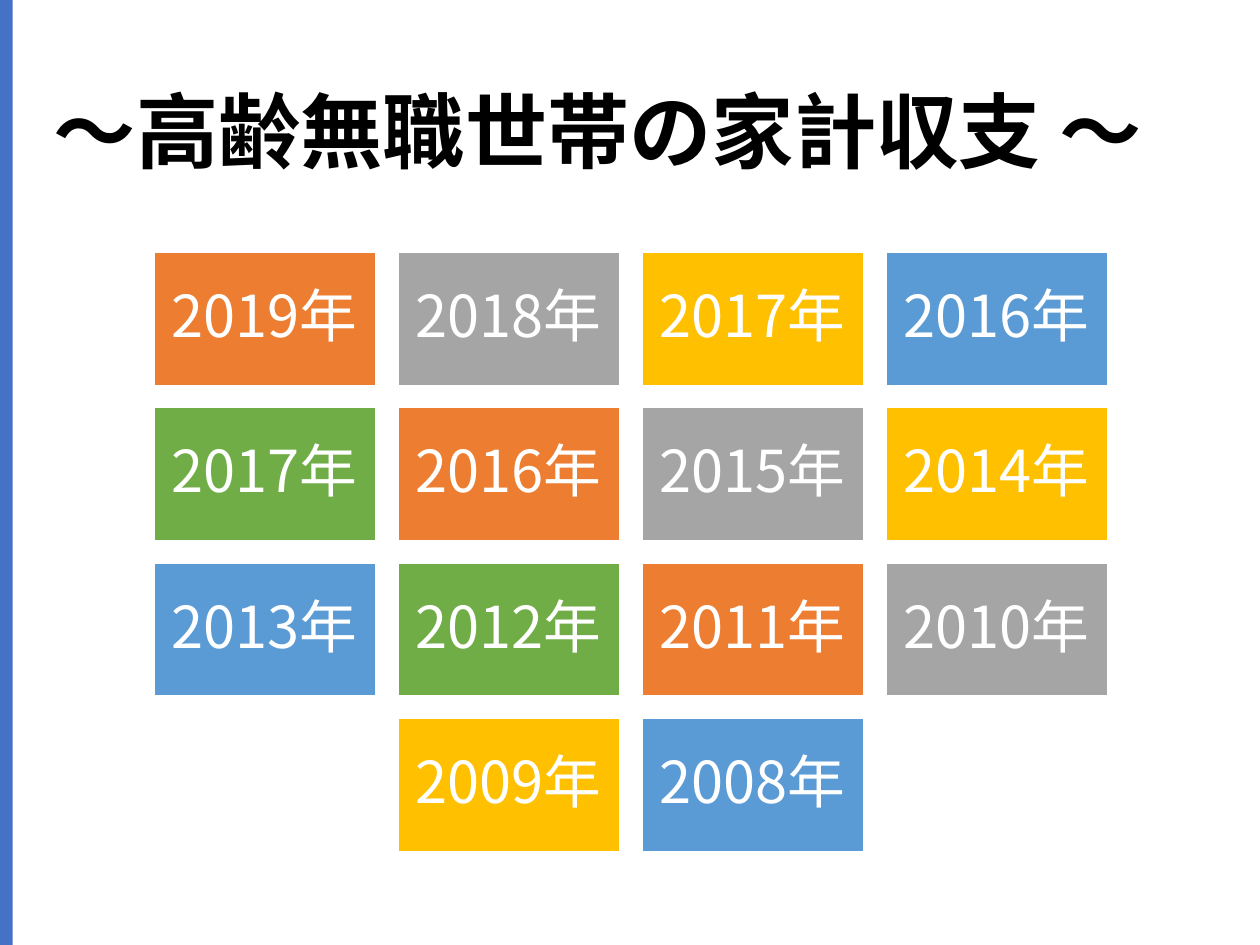
import itertools

import lxml.etree
import pptx
import pptx.dml.color
import pptx.enum.shapes
import pptx.enum.text
import pptx.oxml.ns
import pptx.util

Inches = pptx.util.Inches
RGBColor = pptx.dml.color.RGBColor
Align = pptx.enum.text.PP_ALIGN

FONT = "Noto Sans CJK JP"
BLACK = RGBColor(0x00, 0x00, 0x00)
WHITE = RGBColor(0xFF, 0xFF, 0xFF)
BAR_BLUE = RGBColor(0x44, 0x72, 0xC4)
ORANGE = RGBColor(0xED, 0x7D, 0x31)
GRAY = RGBColor(0xA5, 0xA5, 0xA5)
YELLOW = RGBColor(0xFF, 0xC0, 0x00)
BLUE = RGBColor(0x5B, 0x9B, 0xD5)
GREEN = RGBColor(0x70, 0xAD, 0x47)
TILE_COLORS = (ORANGE, GRAY, YELLOW, BLUE, GREEN)

YEAR_ROWS = (
    (2019, 2018, 2017, 2016),
    (2017, 2016, 2015, 2014),
    (2013, 2012, 2011, 2010),
    (2009, 2008),
)


def write_text(shape, text, *, size, color, bold=False, align=Align.LEFT, inset=None):
    """Write one vertically centred paragraph into a shape."""
    frame = shape.text_frame
    frame.word_wrap = True
    frame.vertical_anchor = pptx.enum.text.MSO_ANCHOR.MIDDLE
    if inset is not None:
        frame.margin_left = frame.margin_right = inset
        frame.margin_top = frame.margin_bottom = inset
    paragraph = frame.paragraphs[0]
    paragraph.alignment = align
    paragraph.line_spacing = 0.9
    run = paragraph.add_run()
    run.text = text
    run.font.name = FONT
    run.font.size = pptx.util.Pt(size)
    run.font.bold = bold
    run.font.color.rgb = color
    east_asian = lxml.etree.SubElement(
        run.font._element, pptx.oxml.ns.qn("a:ea")
    )
    east_asian.set("typeface", FONT)


def add_rectangle(slide, left, top, width, height, fill, line=None):
    """Add a flat rectangle, outlined only when a line colour is given."""
    shape = slide.shapes.add_shape(
        pptx.enum.shapes.MSO_SHAPE.RECTANGLE, left, top, width, height
    )
    shape.shadow.inherit = False
    shape.fill.solid()
    shape.fill.fore_color.rgb = fill
    if line is None:
        shape.line.fill.background()
    else:
        shape.line.color.rgb = line
        shape.line.width = pptx.util.Pt(1)
    return shape


def add_title(slide, left, top, width, height):
    """Place the slide heading."""
    title = slide.shapes.add_textbox(left, top, width, height)
    write_text(title, "～高齢無職世帯の家計収支 ～", size=47, color=BLACK, bold=True)


def add_year_grid(slide, left, top, width, height):
    """Place the year tiles in centred rows with equal gaps inside the box."""
    tile_width, tile_height = Inches(1.76), Inches(1.06)
    columns = max(map(len, YEAR_ROWS))
    column_step = (width - tile_width) / (columns - 1)
    row_step = (height - tile_height) / (len(YEAR_ROWS) - 1)
    colors = itertools.cycle(TILE_COLORS)
    for row, years in enumerate(YEAR_ROWS):
        indent = (columns - len(years)) / 2
        for column, year in enumerate(years):
            tile = add_rectangle(
                slide,
                round(left + (indent + column) * column_step),
                round(top + row * row_step),
                tile_width,
                tile_height,
                next(colors),
                WHITE,
            )
            write_text(
                tile, f"{year}年", size=33, color=WHITE,
                align=Align.CENTER, inset=Inches(0.14),
            )


def main():
    """Build and save the presentation."""
    presentation = pptx.Presentation()
    presentation.slide_width = Inches(10)
    presentation.slide_height = Inches(7.5)
    slide = presentation.slides.add_slide(presentation.slide_layouts[6])
    add_title(slide, Inches(0.33), Inches(0.35), Inches(9.36), Inches(1.45))
    add_rectangle(
        slide, 0, 0, Inches(0.1), presentation.slide_height, BAR_BLUE
    )
    add_year_grid(slide, Inches(1.22), Inches(2), Inches(7.57), Inches(4.76))
    presentation.save("out.pptx")


if __name__ == "__main__":
    main()
